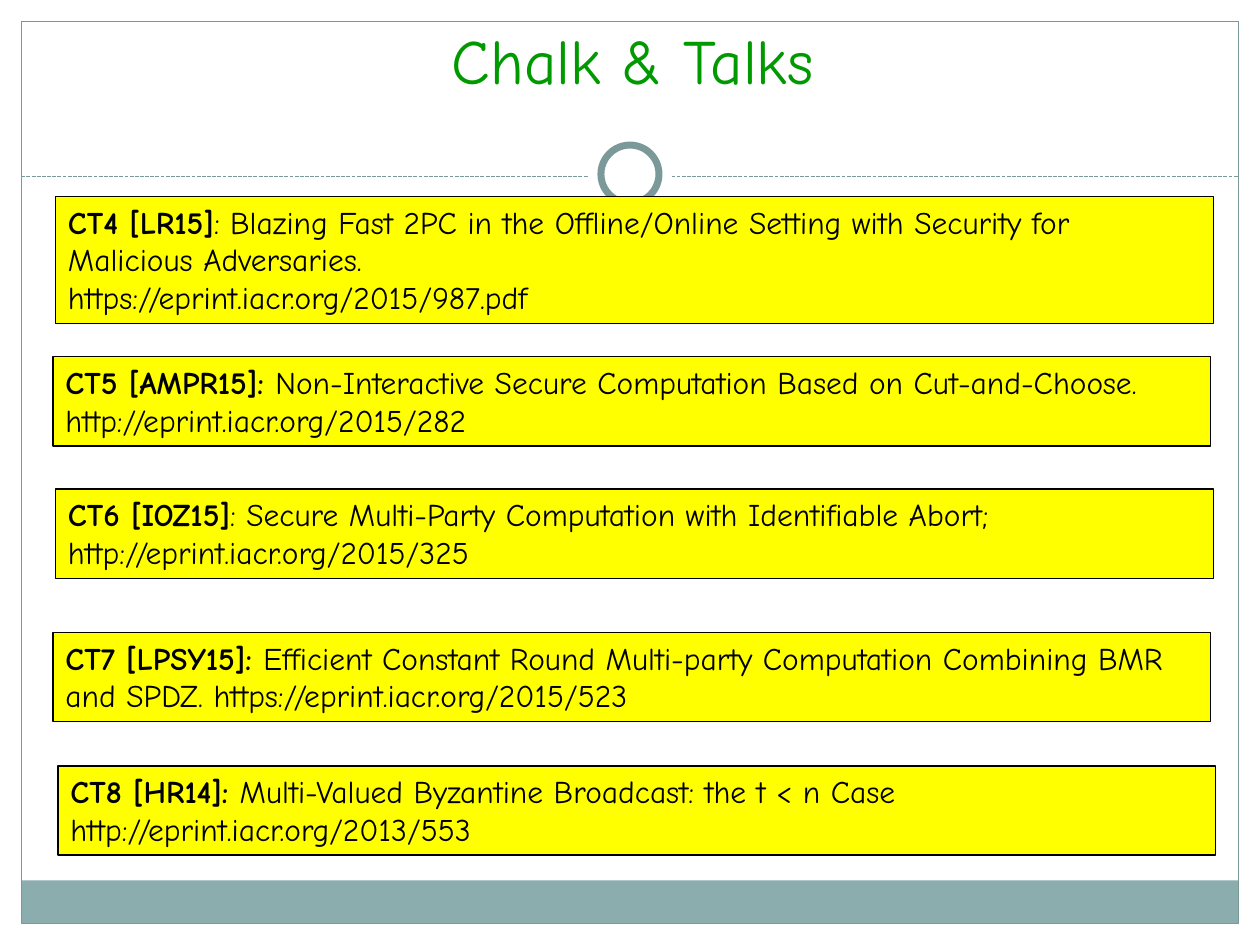
from lxml import etree
from pptx import Presentation
from pptx.dml.color import RGBColor
from pptx.enum.dml import MSO_LINE
from pptx.enum.shapes import MSO_CONNECTOR, MSO_SHAPE
from pptx.enum.text import MSO_ANCHOR, PP_ALIGN
from pptx.oxml.ns import qn
from pptx.util import Cm, Pt

RECT, OVAL = MSO_SHAPE.RECTANGLE, MSO_SHAPE.OVAL
LINE, DASH = MSO_CONNECTOR.STRAIGHT, MSO_LINE.SQUARE_DOT
LEFT, MID, TOP = PP_ALIGN.LEFT, PP_ALIGN.CENTER, MSO_ANCHOR.TOP

FONT = "Comic Neue"
WHITE, BLACK, GREEN, YELLOW = "FFFFFF", "000000", "009900", "FFFF00"
GREY, TEAL = "7C999A", "8CADAE"

# Content: left, top, height in cm, then paragraphs of (text, bold) runs
TITLE = "Chalk & Talks"
TALKS = [
    (1.12, 3.96, 2.57, [
        [("CT4 [LR15]", True),
         (": Blazing Fast 2PC in the Offline/Online Setting with Security "
          "for Malicious Adversaries.", False)],
        [("https://eprint.iacr.org/2015/987.pdf", False)]]),
    (1.07, 7.19, 1.8, [
        [("CT5 [AMPR15]: ", True),
         ("Non-Interactive Secure Computation Based on Cut-and-Choose. "
          "http://eprint.iacr.org/2015/282", False)]]),
    (1.12, 9.86, 1.8, [
        [("CT6 [IOZ15]", True),
         (": Secure Multi-Party Computation with Identifiable Abort; "
          "http://eprint.iacr.org/2015/325", False)]]),
    (1.07, 12.75, 1.8, [
        [("CT7 [LPSY15]: ", True),
         ("Efficient Constant Round Multi-party Computation Combining BMR "
          "and SPDZ. https://eprint.iacr.org/2015/523", False)]]),
    (1.17, 15.44, 1.8, [
        [("CT8 [HR14]: ", True),
         ("Multi-Valued Byzantine Broadcast: the t < n Case "
          "http://eprint.iacr.org/2013/553", False)]]),
]
WIDE, HIGH = 25.4, 19.05
EDGE = 0.43
TALK_W = 23.34
RULE_Y = 3.56
RING_Y = 3.51

deck = Presentation()
deck.slide_width, deck.slide_height = Cm(WIDE), Cm(HIGH)
slide = deck.slides.add_slide(deck.slide_layouts[6])


def color(code):
    return RGBColor.from_string(code)


def add_box(kind, x, y, w, h, fill=None, line=None, weight=0.75):
    box = slide.shapes.add_shape(kind, Cm(x), Cm(y), Cm(w), Cm(h))
    box.shadow.inherit = False
    if fill:
        box.fill.solid()
        box.fill.fore_color.rgb = color(fill)
    else:
        box.fill.background()
    if line:
        box.line.color.rgb = color(line)
        box.line.width = Pt(weight)
    else:
        box.line.fill.background()
    return box


def add_disc(size, **style):
    add_box(OVAL, (WIDE - size) / 2, RING_Y - size / 2, size, size, **style)


def put_text(box, paras, size=18, ink=BLACK, align=LEFT):
    frame = box.text_frame
    frame.word_wrap = True
    frame.vertical_anchor = TOP
    for i, runs in enumerate(paras):
        para = frame.add_paragraph() if i else frame.paragraphs[0]
        para.alignment = align
        for words, bold in runs:
            run = para.add_run()
            run.text = words
            run.font.name = FONT
            run.font.size = Pt(size)
            run.font.bold = bold
            run.font.color.rgb = color(ink)


# Footer band and page frame
add_box(RECT, EDGE, 17.75, WIDE - 2 * EDGE, 0.87, fill=TEAL)
add_box(RECT, EDGE, EDGE, WIDE - 2 * EDGE, HIGH - 2 * EDGE, line=GREY)

# Dashed rule, broken by the ring
rule = slide.shapes.add_connector(
    LINE, Cm(EDGE), Cm(RULE_Y), Cm(WIDE - EDGE), Cm(RULE_Y))
rule.line.color.rgb = color(GREY)
rule.line.width = Pt(0.75)
rule.line.dash_style = DASH
etree.SubElement(rule.element.spPr, qn("a:effectLst"))
add_disc(1.7, fill=WHITE)
add_disc(1.17, fill=WHITE, line=GREY, weight=4)

# Title
head = slide.shapes.add_textbox(Cm(0.51), Cm(0.3), Cm(24.49), Cm(2.97))
put_text(head, [[(TITLE, False)]], size=36, ink=GREEN, align=MID)

# Talks
for x, y, h, paras in TALKS:
    box = add_box(RECT, x, y, TALK_W, h, fill=YELLOW, line=BLACK)
    put_text(box, paras)

deck.save("out.pptx")
